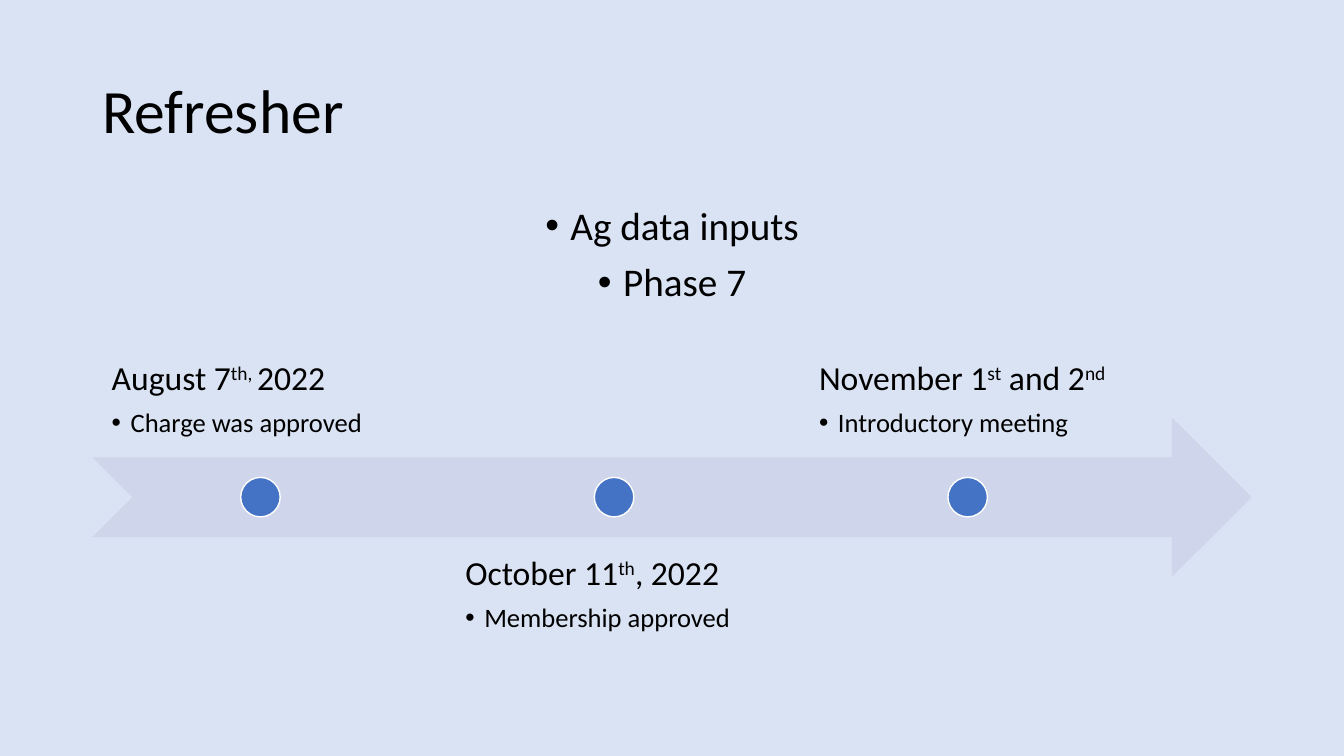
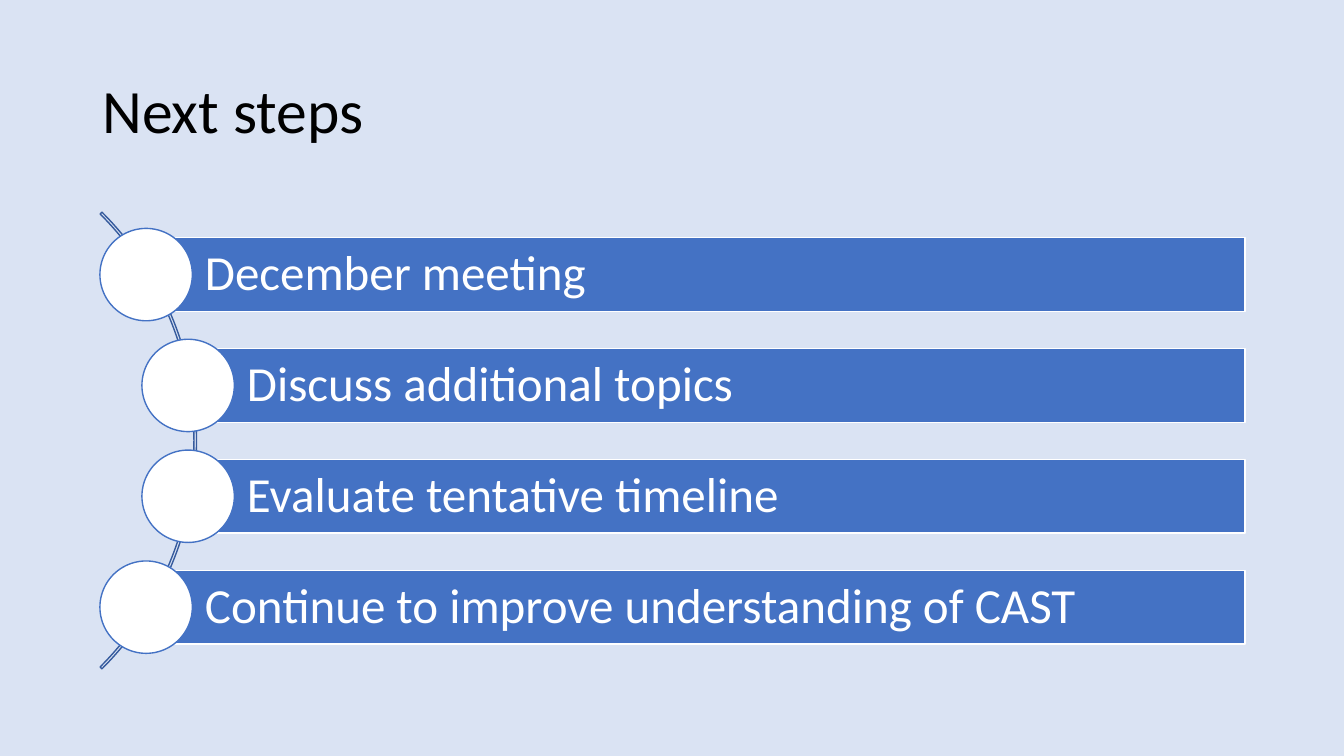
"""Builds a two-slide deck: a project timeline and the next steps."""
from lxml import etree
from pptx import Presentation
from pptx import util as u
from pptx.dml.color import RGBColor
from pptx.enum import shapes, text
from pptx.oxml import ns

BACKDROP = RGBColor(0xDA, 0xE3, 0xF3)
ARROW = RGBColor(0xCF, 0xD5, 0xEA)
BLUE = RGBColor(0x44, 0x72, 0xC4)
DARK_BLUE = RGBColor(0x36, 0x5B, 0x9D)
WHITE = RGBColor(0xFF, 0xFF, 0xFF)
BLACK = RGBColor(0, 0, 0)

FONT = "Calibri"
COLUMNS = 160
WIDTH, HEIGHT = u.Inches(13.33), u.Inches(7.5)
MARGIN, CONTENT = 11, 138


def grid(units):
    return round(units * WIDTH / COLUMNS)


def write(frame, content, size, color=BLACK, align=text.PP_ALIGN.LEFT,
          bullet_indent=0, before=0, after=0, new=False):
    paragraph = frame.add_paragraph() if new else frame.paragraphs[0]
    paragraph.alignment = align
    paragraph.line_spacing = 0.9
    paragraph.space_before, paragraph.space_after = u.Pt(before), u.Pt(after)
    if bullet_indent:
        properties = paragraph._p.get_or_add_pPr()
        properties.set("marL", str(grid(bullet_indent)))
        properties.set("indent", str(-grid(bullet_indent)))
        etree.SubElement(properties, ns.qn("a:buFont"), typeface="Arial")
        etree.SubElement(properties, ns.qn("a:buChar"), char="•")
    for position, piece in enumerate(content.split("^")):
        if not piece:
            continue
        run = paragraph.add_run()
        run.text = piece
        run.font.name, run.font.size = FONT, u.Pt(size)
        run.font.color.rgb = color
        if position % 2:
            run._r.get_or_add_rPr().set("baseline", "30000")


class Deck:
    def __init__(self):
        self.presentation = Presentation()
        self.presentation.slide_width = WIDTH
        self.presentation.slide_height = HEIGHT
        self.slide = None

    def start(self, title):
        layout = self.presentation.slide_layouts[6]
        self.slide = self.presentation.slides.add_slide(layout)
        self.slide.background.fill.solid()
        self.slide.background.fill.fore_color.rgb = BACKDROP
        frame = self.frame(MARGIN, 4.8, CONTENT, 17.4, text.MSO_ANCHOR.MIDDLE)
        write(frame, title, 44)

    def frame(self, left, top, width, height,
              anchor=text.MSO_ANCHOR.TOP, inset=None):
        box = self.slide.shapes.add_textbox(*map(grid, (left, top, width, height)))
        frame = box.text_frame
        frame.word_wrap = True
        frame.vertical_anchor = anchor
        if inset:
            frame.margin_left = frame.margin_right = grid(inset)
            frame.margin_top = frame.margin_bottom = grid(inset)
        return frame

    def shape(self, kind, left, top, width, height, fill=None, line=None):
        figure = self.slide.shapes.add_shape(
            kind, *map(grid, (left, top, width, height)))
        figure.shadow.inherit = False
        if fill is None:
            figure.fill.background()
        else:
            figure.fill.solid()
            figure.fill.fore_color.rgb = fill
        if line is None:
            figure.line.fill.background()
        else:
            figure.line.color.rgb = line
            figure.line.width = u.Pt(1)
        return figure

    def circle(self, center, middle, diameter, fill, line):
        self.shape(shapes.MSO_SHAPE.OVAL, center - diameter / 2,
                   middle - diameter / 2, diameter, diameter, fill, line)

    def milestone(self, left, top, width, height, anchor, date, event):
        frame = self.frame(left, top, width, height, anchor, inset=2.3)
        write(frame, date, 24, after=8.4)
        write(frame, event, 19, bullet_indent=2.25, after=2.85, new=True)

    def step(self, left, top, right, height, label):
        bar = self.shape(shapes.MSO_SHAPE.RECTANGLE, left, top,
                         right - left, height, BLUE, WHITE)
        frame = bar.text_frame
        frame.word_wrap = True
        frame.vertical_anchor = text.MSO_ANCHOR.MIDDLE
        frame.margin_left, frame.margin_right = grid(7), grid(1.2)
        write(frame, label, 35, color=WHITE)
        self.circle(left, top + height / 2, 11, WHITE, BLUE)


def refresher(deck):
    deck.start("Refresher")
    topics = deck.frame(MARGIN, 24, CONTENT, 57.1)
    for index, topic in enumerate(("Ag data inputs", "Phase 7")):
        write(topics, topic, 28, align=text.PP_ALIGN.CENTER,
              bullet_indent=3, before=10, new=index > 0)

    top, height, label_width, pitch = 49.7, 19, 40, 42.1
    deck.shape(shapes.MSO_SHAPE.NOTCHED_RIGHT_ARROW,
               MARGIN, top, CONTENT, height, ARROW)
    milestones = (
        ("August 7^th, ^2022", "Charge was approved"),
        ("October 11^th^, 2022", "Membership approved"),
        ("November 1^st^ and 2^nd^", "Introductory meeting"),
    )
    for index, (date, event) in enumerate(milestones):
        left = MARGIN + index * pitch
        below = index % 2
        anchor = text.MSO_ANCHOR.TOP if below else text.MSO_ANCHOR.BOTTOM
        offset = height * 0.75 if below else -height * 0.75
        deck.milestone(left, top + offset, label_width, height,
                       anchor, date, event)
        deck.circle(left + label_width / 2, top + height / 2, 4.7, BLUE, WHITE)


def next_steps(deck):
    deck.start("Next steps")
    arc = deck.shape(shapes.MSO_SHAPE.BLOCK_ARC, -53.5, 14, 76.9, 76.9,
                     line=DARK_BLUE)
    for index, value in enumerate((189, 27, 0.004)):
        arc.adjustments[index] = value
    steps = (
        (17.4, "December meeting"),
        (22.4, "Discuss additional topics"),
        (22.4, "Evaluate tentative timeline"),
        (17.4, "Continue to improve understanding of CAST"),
    )
    for index, (left, label) in enumerate(steps):
        deck.step(left, 28.3 + index * 13.2, 148.2, 8.8, label)


def main():
    deck = Deck()
    refresher(deck)
    next_steps(deck)
    deck.presentation.save("out.pptx")


if __name__ == "__main__":
    main()
